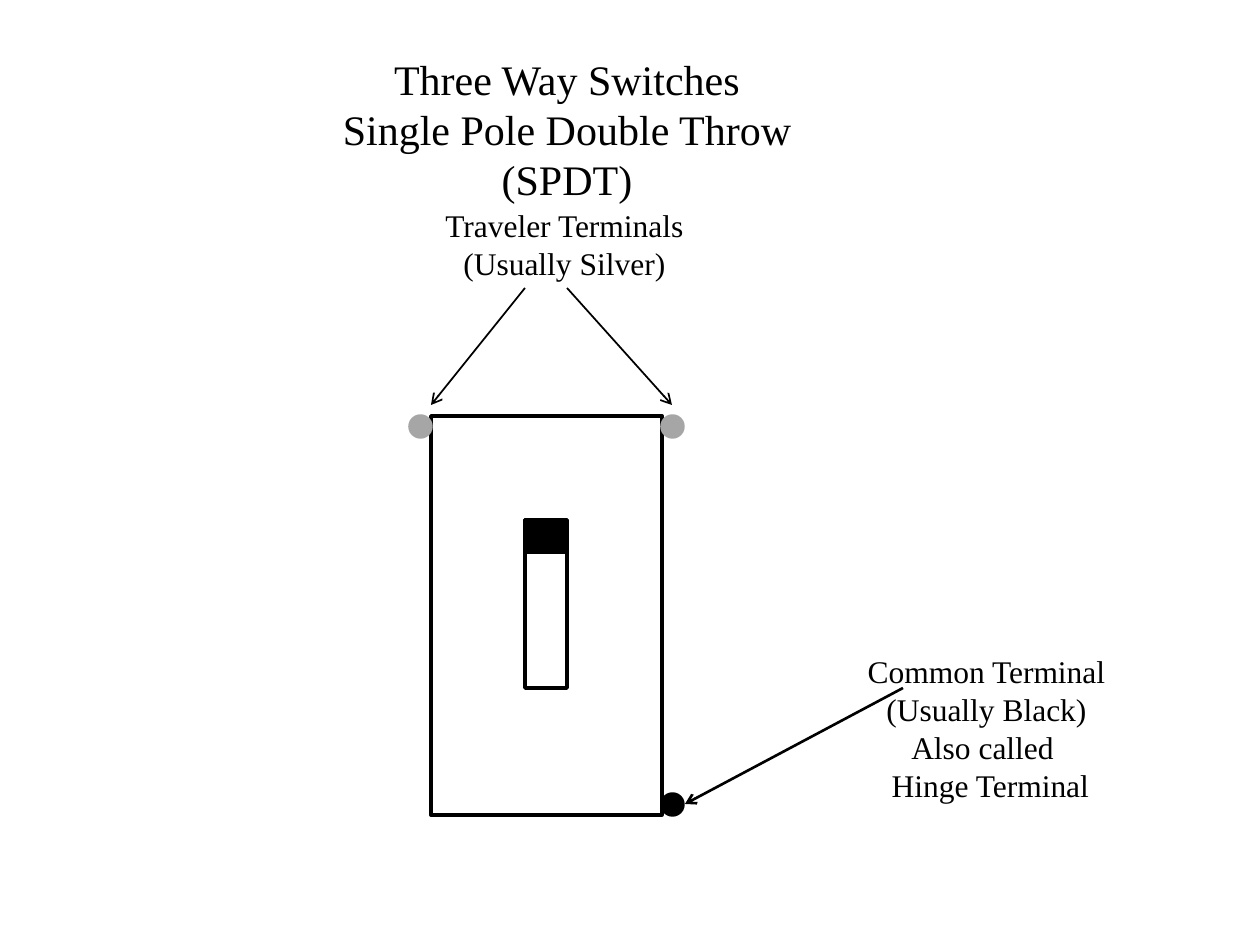
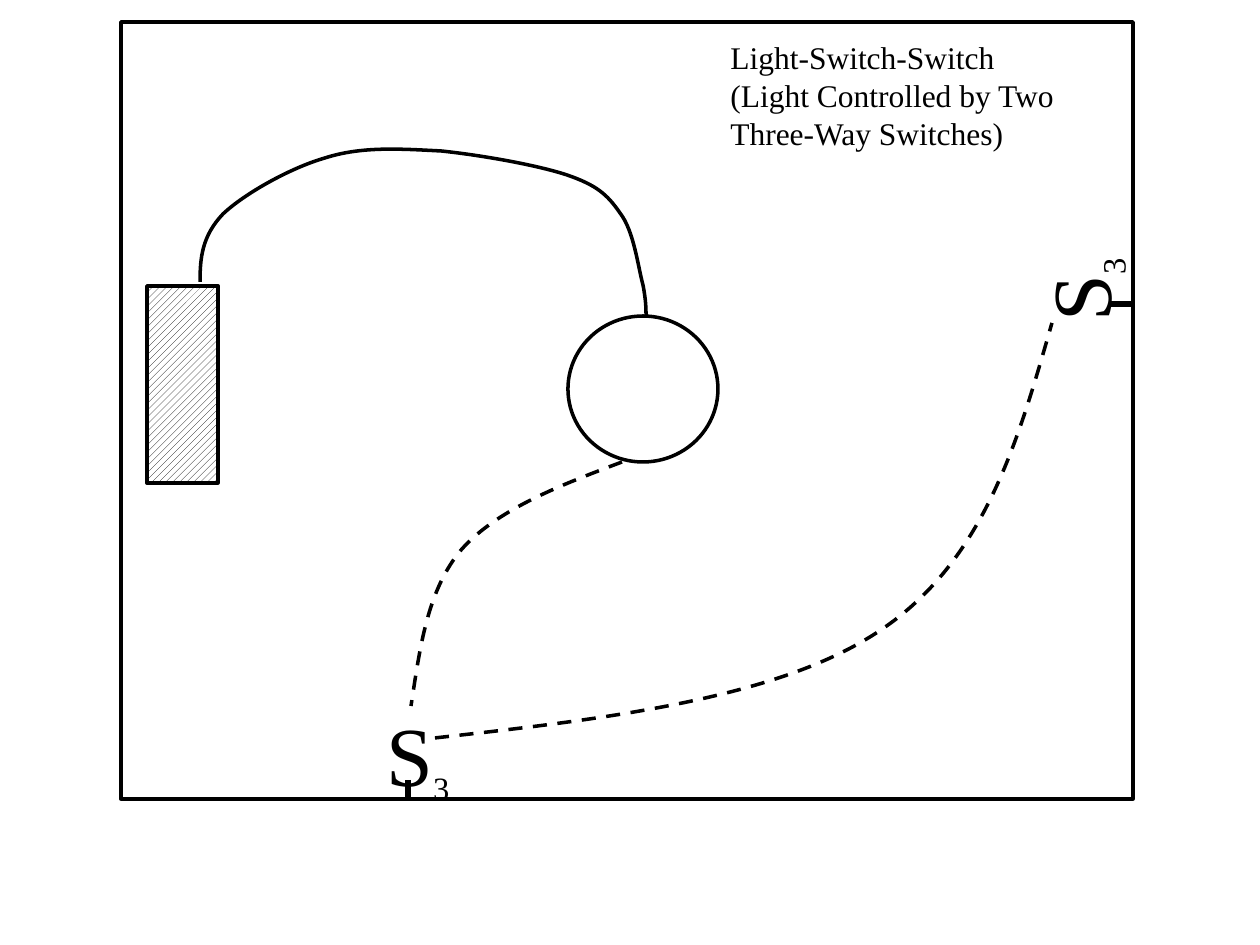
from dataclasses import dataclass
from typing import Optional

from lxml import etree
from pptx import Presentation
from pptx import util as u
from pptx.dml.color import RGBColor
from pptx.enum import dml, shapes, text
from pptx.oxml.ns import qn

PX = 914400 / 126
FONT = "Times New Roman"
BLACK, WHITE, SILVER = "000000", "FFFFFF", "A6A6A6"
RECTANGLE, OVAL = shapes.MSO_SHAPE.RECTANGLE, shapes.MSO_SHAPE.OVAL
LEFT, CENTER = text.PP_ALIGN.LEFT, text.PP_ALIGN.CENTER
Point = tuple[int, int]


@dataclass
class Box:
    left: int
    top: int
    width: int
    height: int

    @property
    def right(self) -> int:
        return self.left + self.width

    @property
    def bottom(self) -> int:
        return self.top + self.height

    def emu(self) -> list[u.Emu]:
        return [px(n) for n in (self.left, self.top, self.width, self.height)]


@dataclass
class Figure:
    kind: shapes.MSO_SHAPE
    box: Box
    fill: Optional[str] = None
    line: str = BLACK
    hatched: bool = False


@dataclass
class Label:
    box: Box
    lines: list[str]
    size: int = 18
    align: text.PP_ALIGN = CENTER


@dataclass
class Stroke:
    start: Point
    end: Point
    weight: float
    arrow: bool = False


@dataclass
class Cable:
    start: Point
    controls: list[Point]
    dashed: bool = True


def px(length: int) -> u.Emu:
    return u.Emu(round(length * PX))


def color(value: str) -> RGBColor:
    return RGBColor.from_string(value)


def draw_figure(slide, figure: Figure) -> None:
    shape = slide.shapes.add_shape(figure.kind, *figure.box.emu())
    shape.shadow.inherit = False
    shape.line.color.rgb = color(figure.line)
    shape.line.width = u.Pt(2)
    if figure.hatched:
        shape.fill.patterned()
        shape.fill.pattern = dml.MSO_PATTERN.WIDE_UPWARD_DIAGONAL
        shape.fill.fore_color.rgb = color(BLACK)
        shape.fill.back_color.rgb = color(WHITE)
    elif figure.fill:
        shape.fill.solid()
        shape.fill.fore_color.rgb = color(figure.fill)
    else:
        shape.fill.background()


def add_text_box(slide, box: Box):
    shape = slide.shapes.add_textbox(*box.emu())
    shape.text_frame.word_wrap = True
    shape.text_frame.auto_size = text.MSO_AUTO_SIZE.SHAPE_TO_FIT_TEXT
    return shape


def style_paragraph(paragraph, align: text.PP_ALIGN) -> None:
    paragraph.alignment = align
    paragraph.font.name = FONT
    paragraph.font.color.rgb = color(BLACK)


def draw_label(slide, label: Label) -> None:
    frame = add_text_box(slide, label.box).text_frame
    frame.text = "\n".join(label.lines)
    for paragraph in frame.paragraphs:
        style_paragraph(paragraph, label.align)
        paragraph.font.size = u.Pt(label.size)


def draw_switch_symbol(slide, box: Box, rotation: int = 0) -> None:
    shape = add_text_box(slide, box)
    shape.rotation = rotation
    paragraph = shape.text_frame.paragraphs[0]
    style_paragraph(paragraph, LEFT)
    for letter, size, baseline in (("S", 48, 0), ("3", 32, -25000)):
        run = paragraph.add_run()
        run.text = letter
        run.font.size = u.Pt(size)
        if baseline:
            run._r.get_or_add_rPr().set("baseline", str(baseline))


def draw_stroke(slide, stroke: Stroke) -> None:
    ends = [px(n) for n in (*stroke.start, *stroke.end)]
    connector = slide.shapes.add_connector(shapes.MSO_CONNECTOR.STRAIGHT, *ends)
    connector.line.color.rgb = color(BLACK)
    connector.line.width = u.Pt(stroke.weight)
    properties = connector._element.spPr
    if stroke.arrow:
        etree.SubElement(properties.find(qn("a:ln")), qn("a:tailEnd"), type="arrow")
    etree.SubElement(properties, qn("a:effectLst"))


def draw_cable(slide, cable: Cable) -> None:
    """Draw a freeform whose vertices, taken in threes, become Bezier segments."""
    builder = slide.shapes.build_freeform(*cable.start, scale=PX)
    builder.add_line_segments(cable.controls, close=False)
    shape = builder.convert_to_shape()
    shape.shadow.inherit = False
    shape.fill.background()
    shape.line.color.rgb = color(BLACK)
    shape.line.width = u.Pt(2)
    if cable.dashed:
        shape.line.dash_style = dml.MSO_LINE.DASH
    outline = next(shape._element.iter(qn("a:path")))
    segments = outline.findall(qn("a:lnTo"))
    for first in range(0, len(segments), 3):
        curve = etree.SubElement(outline, qn("a:cubicBezTo"))
        for segment in segments[first:first + 3]:
            curve.append(segment[0])
            outline.remove(segment)


def build_terminals_slide(slide) -> None:
    plate = Box(431, 416, 231, 399)
    toggle = Box(525, 520, 42, 168)
    terminal = 21
    draw_label(slide, Label(
        Box(131, 47, 872, 165),
        ["Three Way Switches", "Single Pole Double Throw", "(SPDT)"], 24))
    draw_figure(slide, Figure(RECTANGLE, plate))
    for left, top, metal in (
        (plate.left - terminal, plate.top, SILVER),
        (plate.right, plate.top, SILVER),
        (plate.right, plate.bottom - terminal, BLACK),
    ):
        draw_figure(slide, Figure(OVAL, Box(left, top, terminal, terminal), metal, metal))
    draw_figure(slide, Figure(RECTANGLE, toggle))
    draw_figure(slide, Figure(
        RECTANGLE, Box(toggle.left, toggle.top, toggle.width, 32), BLACK))
    draw_label(slide, Label(
        Box(431, 200, 267, 89), ["Traveler Terminals (Usually Silver)"]))
    draw_label(slide, Label(
        Box(800, 646, 373, 165),
        ["Common Terminal", "(Usually Black)", "Also called ", " Hinge Terminal"]))
    for stroke in (
        Stroke((525, 288), (431, 405), 1, True),
        Stroke((567, 288), (672, 405), 1, True),
        Stroke((903, 688), (685, 804), 1.5, True),
    ):
        draw_stroke(slide, stroke)


def build_wiring_slide(slide) -> None:
    room = Box(121, 22, 1012, 777)
    draw_label(slide, Label(
        Box(718, 32, 399, 103),
        ["Light-Switch-Switch", "(Light Controlled by Two Three-Way Switches)"],
        align=LEFT))
    draw_figure(slide, Figure(OVAL, Box(568, 316, 150, 146)))
    draw_switch_symbol(slide, Box(374, 696, 97, 93))
    draw_switch_symbol(slide, Box(1022, 238, 95, 96), 270)
    draw_stroke(slide, Stroke((408, 780), (408, room.bottom), 3))
    draw_stroke(slide, Stroke((1110, 304), (room.right, 304), 3))
    for cable in (
        Cable((200, 282), [
            (200, 258), (202, 236), (223, 214),
            (244, 194), (290, 168), (325, 158),
            (362, 146), (401, 149), (441, 151),
            (480, 155), (537, 165), (567, 175),
            (596, 185), (607, 194), (620, 213),
            (634, 231), (638, 267), (643, 285),
            (646, 301), (646, 309), (646, 316)], dashed=False),
        Cable((622, 462), [
            (561, 485), (498, 509), (462, 549),
            (427, 590), (420, 648), (411, 706)]),
        Cable((435, 738), [
            (606, 719), (779, 699), (881, 630),
            (984, 561), (1018, 442), (1052, 323)]),
    ):
        draw_cable(slide, cable)
    draw_figure(slide, Figure(RECTANGLE, Box(147, 286, 71, 197), hatched=True))
    draw_figure(slide, Figure(RECTANGLE, room))


def main() -> None:
    presentation = Presentation()
    presentation.slide_width, presentation.slide_height = px(1260), px(945)
    for build in (build_terminals_slide, build_wiring_slide):
        build(presentation.slides.add_slide(presentation.slide_layouts[6]))
    presentation.save("out.pptx")


if __name__ == "__main__":
    main()
